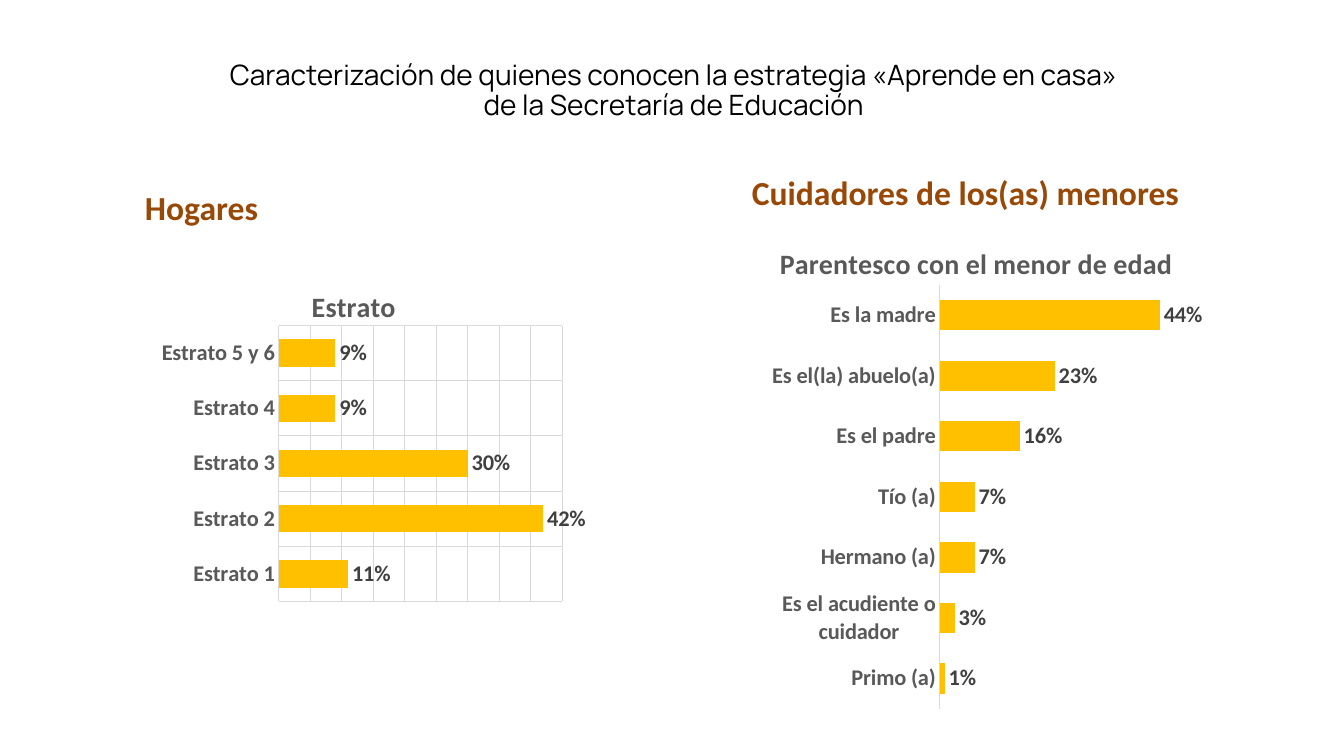
from lxml import etree
from pptx import Presentation
from pptx.chart.data import CategoryChartData
from pptx.dml.color import RGBColor
from pptx.enum.chart import XL_CHART_TYPE as ChartType
from pptx.enum.chart import XL_LABEL_POSITION as LabelPosition
from pptx.enum.chart import XL_TICK_MARK as TickMark
from pptx.enum.text import MSO_ANCHOR, PP_ALIGN
from pptx.oxml.ns import qn
from pptx.util import Pt

BLACK = RGBColor(0x00, 0x00, 0x00)
BROWN = RGBColor(0x98, 0x48, 0x07)
AMBER = RGBColor(0xFF, 0xC0, 0x00)
GRAY = RGBColor(0x59, 0x59, 0x59)
DARK_GRAY = RGBColor(0x40, 0x40, 0x40)
LIGHT_GRAY = RGBColor(0xD9, 0xD9, 0xD9)
PERCENT = "###0%"

presentation = Presentation()
presentation.slide_width = Pt(960)
presentation.slide_height = Pt(540)
slide = presentation.slides.add_slide(presentation.slide_layouts[6])


def add_text(text, left, top, width, height, *, size, color, font="Calibri",
             bold=False, align=PP_ALIGN.LEFT, wrap=False, spacing=1.0):
    box = slide.shapes.add_textbox(Pt(left), Pt(top), Pt(width), Pt(height))
    frame = box.text_frame
    frame.word_wrap = wrap
    frame.vertical_anchor = MSO_ANCHOR.TOP
    paragraph = frame.paragraphs[0]
    paragraph.text = text
    paragraph.alignment = align
    paragraph.line_spacing = spacing
    paragraph.font.name = font
    paragraph.font.size = Pt(size)
    paragraph.font.bold = bold
    paragraph.font.color.rgb = color


def set_layout(element, index, **values):
    """Place a chart part by hand, in fractions of the chart's size."""
    for old_layout in element.findall(qn("c:layout")):
        element.remove(old_layout)
    layout = etree.Element(qn("c:layout"))
    manual = etree.SubElement(layout, qn("c:manualLayout"))
    for tag, value in values.items():
        etree.SubElement(manual, qn(f"c:{tag}")).set("val", str(value))
    element.insert(index, layout)


add_text("Caracterización de quienes conocen la estrategia «Aprende en casa» "
         "de la Secretaría de Educación", 149, 40.3, 664.6, 51.1, size=20,
         color=BLACK, font="Manrope", align=PP_ALIGN.CENTER, wrap=True, spacing=0.9)
add_text("Hogares", 96.5, 130.3, 96.5, 36, size=24, color=BROWN, bold=True)
add_text("Cuidadores de los(as) menores", 530, 119.5, 322.6, 36,
         size=24, color=BROWN, bold=True)

charts = [
    dict(title="Estrato", box=(86.4, 180, 331.9, 262.8),
         shares={"Estrato 1": 0.11, "Estrato 2": 0.42, "Estrato 3": 0.30,
                 "Estrato 4": 0.09, "Estrato 5 y 6": 0.09},
         title_at=(0.4, 0.08), plot=(0.34, 0.2, 0.61, 0.75),
         maximum=0.45, grid=True, reverse=False),
    dict(title="Parentesco con el menor de edad", box=(504, 155.5, 380.2, 369.4),
         shares={"Es la madre": 0.44, "Es el(la) abuelo(a)": 0.23,
                 "Es el padre": 0.16, "Tío (a)": 0.07, "Hermano (a)": 0.07,
                 "Es el acudiente o cuidador": 0.03, "Primo (a)": 0.01},
         title_at=(0.13, 0.04), plot=(0.44, 0.13, 0.47, 0.82),
         maximum=0.5, grid=False, reverse=True),
]

for spec_chart in charts:
    data = CategoryChartData(number_format=PERCENT)
    data.categories = list(spec_chart["shares"])
    data.add_series("Series 1", list(spec_chart["shares"].values()))
    chart = slide.shapes.add_chart(
        ChartType.BAR_CLUSTERED, *map(Pt, spec_chart["box"]), data).chart
    chart.has_legend = False
    chart.font.name = "Calibri"
    chart.font.size = Pt(10)
    chart.font.color.rgb = BLACK

    title = chart.chart_title
    title.text_frame.text = spec_chart["title"]
    title_font = title.text_frame.paragraphs[0].runs[0].font
    title_font.name = "Calibri"
    title_font.size = Pt(20)
    title_font.bold = True
    title_font.color.rgb = GRAY
    x, y = spec_chart["title_at"]
    set_layout(title._element, 1, xMode="edge", yMode="edge", x=x, y=y)
    x, y, width, height = spec_chart["plot"]
    set_layout(chart._chartSpace.chart.plotArea, 0, layoutTarget="inner",
               xMode="edge", yMode="edge", x=x, y=y, w=width, h=height)

    category_axis = chart.category_axis
    category_axis.reverse_order = spec_chart["reverse"]
    category_axis.major_tick_mark = TickMark.NONE
    category_axis.tick_labels.font.name = "Calibri"
    category_axis.tick_labels.font.size = Pt(16)
    category_axis.tick_labels.font.bold = True
    category_axis.tick_labels.font.color.rgb = GRAY
    category_axis.format.line.color.rgb = LIGHT_GRAY
    category_axis.format.line.width = Pt(0.75)

    value_axis = chart.value_axis
    value_axis.visible = False
    value_axis.minimum_scale = 0
    value_axis.maximum_scale = spec_chart["maximum"]
    value_axis.major_unit = 0.05
    for axis in (category_axis, value_axis):
        axis.has_major_gridlines = spec_chart["grid"]
        if spec_chart["grid"]:
            axis.major_gridlines.format.line.color.rgb = LIGHT_GRAY
            axis.major_gridlines.format.line.width = Pt(0.75)

    plot = chart.plots[0]
    plot.gap_width = 100
    plot.vary_by_categories = False
    fill = plot.series[0].format.fill
    fill.solid()
    fill.fore_color.rgb = AMBER
    plot.has_data_labels = True
    labels = plot.data_labels
    labels.show_value = True
    labels.position = LabelPosition.OUTSIDE_END
    labels.number_format = PERCENT
    labels.number_format_is_linked = False
    labels.font.name = "Calibri"
    labels.font.size = Pt(16)
    labels.font.bold = True
    labels.font.color.rgb = DARK_GRAY

presentation.save("out.pptx")
